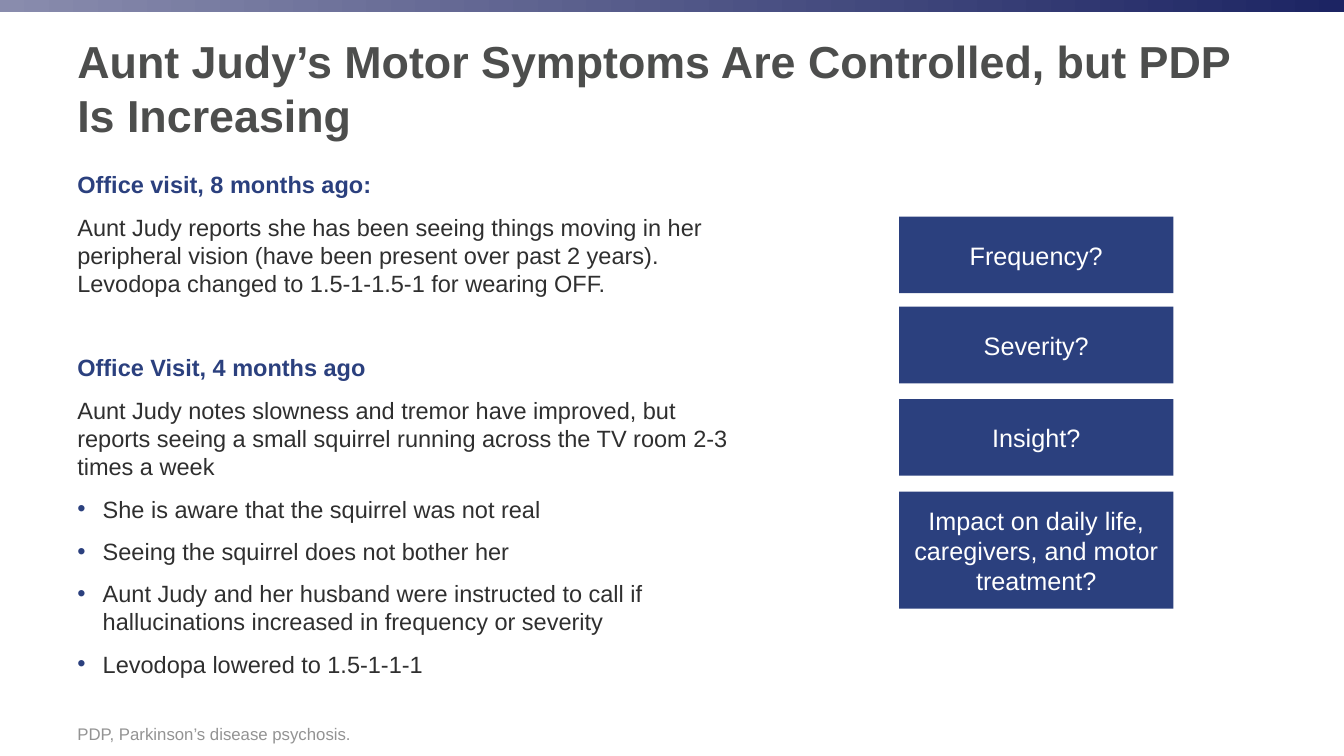
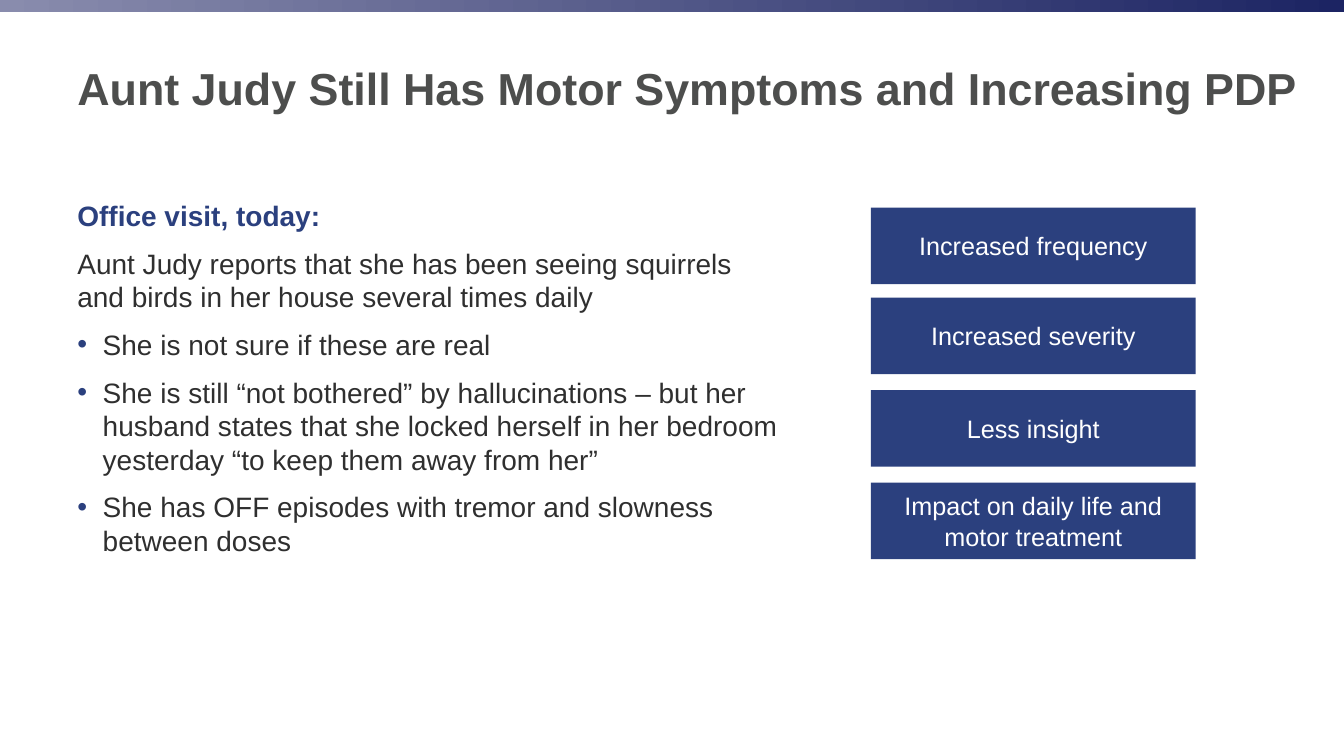
from pptx import Presentation
from pptx import util as u
from pptx.dml.color import RGBColor
from pptx.enum import shapes, text
from pptx.oxml.ns import qn
from lxml import etree

NAVY = RGBColor(0x2B, 0x40, 0x7E)
TITLE_GRAY = RGBColor(0x4D, 0x4E, 0x4D)
BODY_GRAY = RGBColor(0x2F, 0x2F, 0x2F)
NOTE_GRAY = RGBColor(0x93, 0x93, 0x93)
WHITE = RGBColor(0xFF, 0xFF, 0xFF)
BAND_START = RGBColor(0x89, 0x8C, 0xAD)
BAND_END = RGBColor(0x1C, 0x24, 0x63)

FONT = "Arial"
SLIDE_WIDTH, SLIDE_HEIGHT = u.Cm(33.87), u.Cm(19.05)
LEFT = 1.7
BULLET_INDENT = u.Cm(0.64)
BOX_HEIGHT = 1.93
BOX_OFFSETS = (0, 2.27, 4.6, 6.93)

HEADING, PLAIN, BULLET = "heading", "plain", "bullet"
PARAGRAPH_GAP, SECTION_GAP = 10, 40


def apply_format(target, values):
    for name, value in values.items():
        setattr(target, name, value)


def write_paragraph(paragraph, words, size, color, bold=False):
    run = paragraph.add_run()
    run.text = words
    apply_format(run.font, {"name": FONT, "size": u.Pt(size), "bold": bold})
    run.font.color.rgb = color


def add_text_frame(slide, left, top, width, height, anchor):
    shape = slide.shapes.add_textbox(*map(u.Cm, (left, top, width, height)))
    frame = shape.text_frame
    apply_format(frame, {"word_wrap": True, "vertical_anchor": anchor})
    return frame


def add_rectangle(slide, left, top, width, height):
    shape = slide.shapes.add_shape(
        shapes.MSO_SHAPE.RECTANGLE, left, top, width, height)
    shape.shadow.inherit = False
    shape.line.fill.background()
    return shape


def add_band(slide):
    fill = add_rectangle(slide, 0, 0, SLIDE_WIDTH, u.Cm(0.3)).fill
    fill.gradient()
    fill.gradient_angle = 0
    for stop, position, color in zip(
            fill.gradient_stops, (0, 1), (BAND_START, BAND_END)):
        stop.position = position
        stop.color.rgb = color


def add_titled_slide(presentation, title, width):
    slide = presentation.slides.add_slide(presentation.slide_layouts[6])
    add_band(slide)
    frame = add_text_frame(slide, LEFT, 0.56, width, 3.3,
                           text.MSO_ANCHOR.MIDDLE)
    write_paragraph(frame.paragraphs[0], title, 32, TITLE_GRAY, True)
    return slide


def make_bullet(paragraph):
    properties = paragraph._p.get_or_add_pPr()
    properties.set("marL", str(BULLET_INDENT))
    properties.set("indent", str(-BULLET_INDENT))
    color = etree.SubElement(properties, qn("a:buClr"))
    etree.SubElement(color, qn("a:srgbClr"), val=str(NAVY))
    etree.SubElement(properties, qn("a:buFont"), typeface=FONT)
    etree.SubElement(properties, qn("a:buChar"), char="•")


def add_visit_notes(slide, top, width, height, size, entries):
    frame = add_text_frame(slide, LEFT, top, width, height,
                           text.MSO_ANCHOR.TOP)
    for index, (kind, words) in enumerate(entries):
        paragraph = frame.add_paragraph() if index else frame.paragraphs[0]
        new_section = index and kind == HEADING
        paragraph.space_before = u.Pt(
            SECTION_GAP if new_section else PARAGRAPH_GAP)
        if kind == BULLET:
            make_bullet(paragraph)
        color = NAVY if kind == HEADING else BODY_GRAY
        write_paragraph(paragraph, words, size, color, kind == HEADING)


def add_topic_boxes(slide, left, top, width, topics, last_height=BOX_HEIGHT):
    heights = [BOX_HEIGHT] * (len(topics) - 1) + [last_height]
    for topic, offset, height in zip(topics, BOX_OFFSETS, heights):
        box = add_rectangle(
            slide, *map(u.Cm, (left, top + offset, width, height)))
        box.fill.solid()
        box.fill.fore_color.rgb = NAVY
        frame = box.text_frame
        apply_format(frame, {"word_wrap": True,
                             "vertical_anchor": text.MSO_ANCHOR.MIDDLE})
        paragraph = frame.paragraphs[0]
        paragraph.alignment = text.PP_ALIGN.CENTER
        write_paragraph(paragraph, topic, 18, WHITE)


def add_footnote(slide, words):
    frame = add_text_frame(slide, LEFT, 17.65, 29.21, 1.22,
                           text.MSO_ANCHOR.BOTTOM)
    write_paragraph(frame.paragraphs[0], words, 12, NOTE_GRAY)


def build_earlier_visits(presentation):
    slide = add_titled_slide(
        presentation,
        "Aunt Judy’s Motor Symptoms Are Controlled, but PDP Is Increasing",
        29.85)
    add_visit_notes(slide, 4.17, 17.5, 14.35, 16.8, [
        (HEADING, "Office visit, 8 months ago:"),
        (PLAIN, "Aunt Judy reports she has been seeing things moving in her "
                "peripheral vision (have been present over past 2 years). "
                "Levodopa changed to 1.5-1-1.5-1 for wearing OFF."),
        (HEADING, "Office Visit, 4 months ago"),
        (PLAIN, "Aunt Judy notes slowness and tremor have improved, but "
                "reports seeing a small squirrel running across the TV room "
                "2-3 times a week"),
        (BULLET, "She is aware that the squirrel was not real"),
        (BULLET, "Seeing the squirrel does not bother her"),
        (BULLET, "Aunt Judy and her husband were instructed to call if "
                 "hallucinations increased in frequency or severity"),
        (BULLET, "Levodopa lowered to 1.5-1-1-1"),
    ])
    add_topic_boxes(slide, 22.66, 5.46, 6.91, [
        "Frequency?", "Severity?", "Insight?",
        "Impact on daily life, caregivers, and motor treatment?",
    ], last_height=2.95)
    add_footnote(slide, "PDP, Parkinson’s disease psychosis.")


def build_visit_today(presentation):
    slide = add_titled_slide(
        presentation,
        "Aunt Judy Still Has Motor Symptoms and Increasing PDP", 31.5)
    add_visit_notes(slide, 4.88, 18.31, 12.29, 20, [
        (HEADING, "Office visit, today:"),
        (PLAIN, "Aunt Judy reports that she has been seeing squirrels and "
                "birds in her house several times daily"),
        (BULLET, "She is not sure if these are real"),
        (BULLET, "She is still “not bothered” by hallucinations – but her "
                 "husband states that she locked herself in her bedroom "
                 "yesterday “to keep them away from her”"),
        (BULLET, "She has OFF episodes with tremor and slowness between "
                 "doses"),
    ])
    add_topic_boxes(slide, 21.95, 5.23, 8.18, [
        "Increased frequency", "Increased severity", "Less insight",
        "Impact on daily life and motor treatment",
    ])


def main():
    presentation = Presentation()
    apply_format(presentation, {"slide_width": SLIDE_WIDTH,
                                "slide_height": SLIDE_HEIGHT})
    build_earlier_visits(presentation)
    build_visit_today(presentation)
    presentation.save("out.pptx")


if __name__ == "__main__":
    main()
